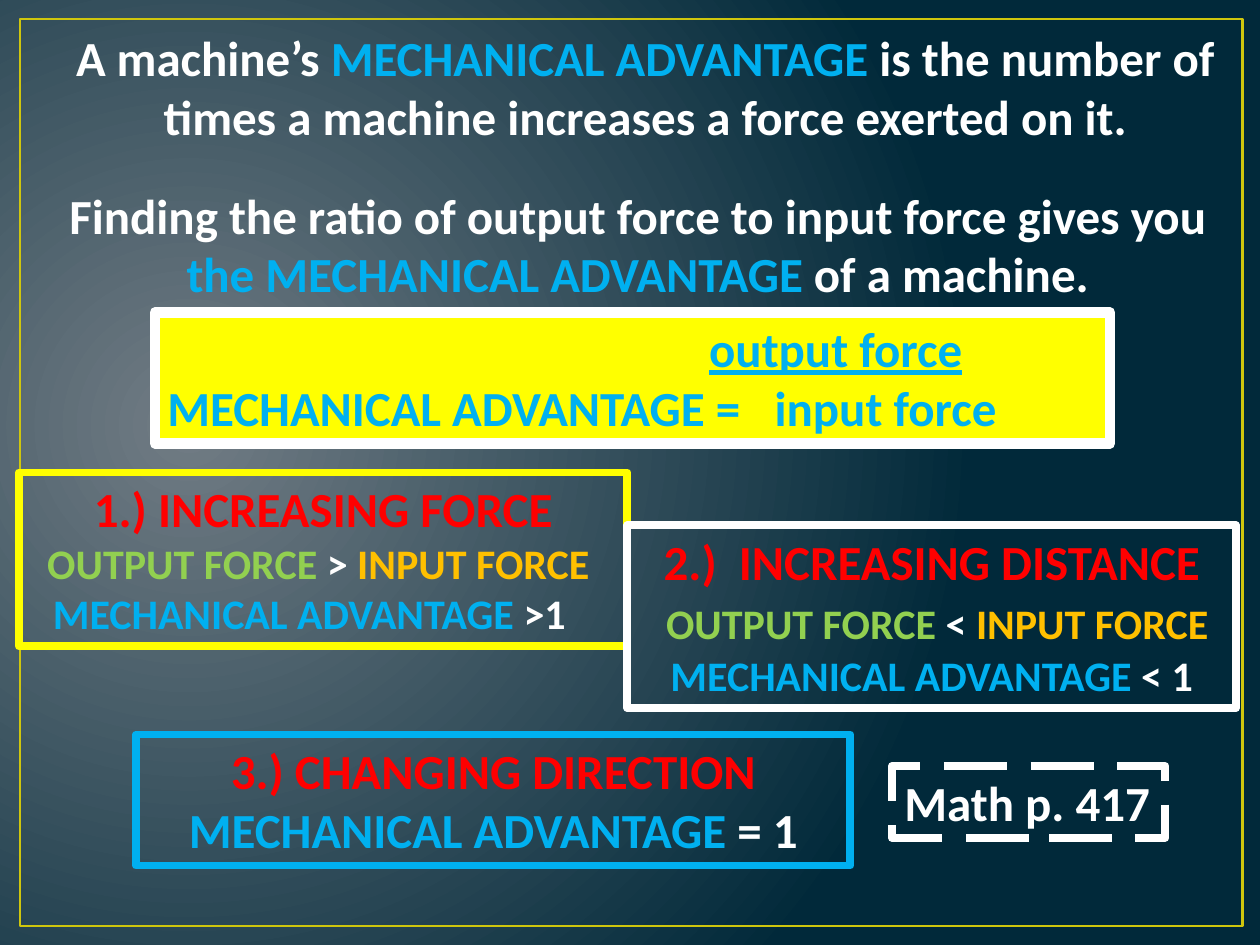
from lxml.etree import SubElement
from pptx import Presentation
from pptx.dml.color import RGBColor
from pptx.enum.dml import MSO_LINE_DASH_STYLE as DASH
from pptx.enum.shapes import MSO_SHAPE
from pptx.enum.text import PP_ALIGN as ALIGN
from pptx.oxml.ns import qn
from pptx.util import Inches, Pt

WHITE, YELLOW, RED = "FFFFFF", "FFFF00", "FF0000"
BLUE, GREEN, ORANGE = "00B0F0", "92D050", "FFC000"


def rgb(color):
    return RGBColor.from_string(color)


def add_text(box, paragraphs, align=ALIGN.CENTER, line=None, width=4.5,
             fill=None, dash=None, wrap=True):
    """Add a text box; each paragraph is a list of (text, color, size) runs."""
    shape = slide.shapes.add_textbox(*[Inches(value) for value in box])
    if fill:
        shape.fill.solid()
        shape.fill.fore_color.rgb = rgb(fill)
    if line:
        shape.line.color.rgb = rgb(line)
        shape.line.width = Pt(width)
    if dash:
        shape.line.dash_style = dash
    frame = shape.text_frame
    frame.word_wrap = wrap
    for index, runs in enumerate(paragraphs):
        paragraph = frame.add_paragraph() if index else frame.paragraphs[0]
        paragraph.alignment = align
        for text, color, size in runs:
            run = paragraph.add_run()
            run.text = text
            run.font.name = "Calibri"
            run.font.size = Pt(size)
            run.font.bold = True
            run.font.color.rgb = rgb(color)
    return frame.paragraphs


presentation = Presentation()
presentation.slide_width = Inches(10)
presentation.slide_height = Inches(7.5)
slide = presentation.slides.add_slide(presentation.slide_layouts[6])

# Radial background, brightest left of the middle
background = slide.background.fill
background.gradient()
for stop, position, color in zip(background.gradient_stops, (0, 1), ("717C84", "01293A")):
    stop.position = position
    stop.color.rgb = rgb(color)
gradient = slide.element.find(".//" + qn("a:gradFill"))
gradient.remove(gradient.find(qn("a:lin")))
circle = SubElement(gradient, qn("a:path"), path="circle")
SubElement(circle, qn("a:fillToRect"), l="15000", t="50000", r="85000", b="60000")

border = slide.shapes.add_shape(
    MSO_SHAPE.RECTANGLE, Inches(0.16), Inches(0.15), Inches(9.7), Inches(7.2))
border.shadow.inherit = False
border.fill.background()
border.line.color.rgb = rgb("CFC60D")
border.line.width = Pt(1.5)

# Definition and ratio
add_text((0.33, 0.17, 9.58, 1.04), [[
    ("A machine’s ", WHITE, 28),
    ("MECHANICAL ADVANTAGE ", BLUE, 28),
    ("is the number of times a machine increases a force exerted on it.", WHITE, 28)]])
add_text((0.35, 1.42, 9.42, 1.04), [[
    ("Finding the ratio of output force to input force gives you ", WHITE, 28),
    ("the MECHANICAL ADVANTAGE ", BLUE, 28),
    ("of a machine.", WHITE, 28)]])

# Formula: an indent places the numerator, a tab stop the denominator
numerator, denominator = add_text(
    (1.23, 2.48, 7.58, 1.04),
    [[("output force", BLUE, 28)],
     [("MECHANICAL ADVANTAGE =\tinput force", BLUE, 28)]],
    align=ALIGN.LEFT, line=WHITE, width=6, fill=YELLOW)
numerator.runs[0].font.underline = True
numerator._p.get_or_add_pPr().set("marL", str(Inches(4.3)))
tabs = SubElement(denominator._p.get_or_add_pPr(), qn("a:tabLst"))
SubElement(tabs, qn("a:tab"), pos=str(Inches(4.82)), algn="l")

# Three uses of a machine
increasing_force = add_text((0.15, 3.75, 4.83, 1.38), [
    [("1.) INCREASING FORCE", RED, 28)],
    [("OUTPUT FORCE ", GREEN, 24), ("> ", WHITE, 24), ("INPUT FORCE ", ORANGE, 24)],
    [("MECHANICAL ADVANTAGE ", BLUE, 24), (">1", WHITE, 24)]], line=YELLOW)
increasing_force[2]._p.get_or_add_pPr().set("marR", str(Inches(0.22)))
add_text((4.98, 4.17, 4.83, 1.45), [
    [("2.)  INCREASING DISTANCE", RED, 28)],
    [(" ", WHITE, 28), ("OUTPUT FORCE ", GREEN, 24), ("< ", WHITE, 24),
     ("INPUT FORCE", ORANGE, 24)],
    [("MECHANICAL ADVANTAGE ", BLUE, 24), ("< 1", WHITE, 24)]], line=WHITE)
add_text((1.08, 5.83, 5.67, 1.04), [
    [("3.) CHANGING DIRECTION", RED, 28)],
    [("MECHANICAL ADVANTAGE ", BLUE, 28), ("= 1", WHITE, 28)]], line=BLUE)

add_text((7.08, 6.08, 2.17, 0.57), [[("Math p. 417", WHITE, 28)]],
         align=ALIGN.LEFT, line=WHITE, dash=DASH.LONG_DASH, wrap=False)

presentation.save("out.pptx")
